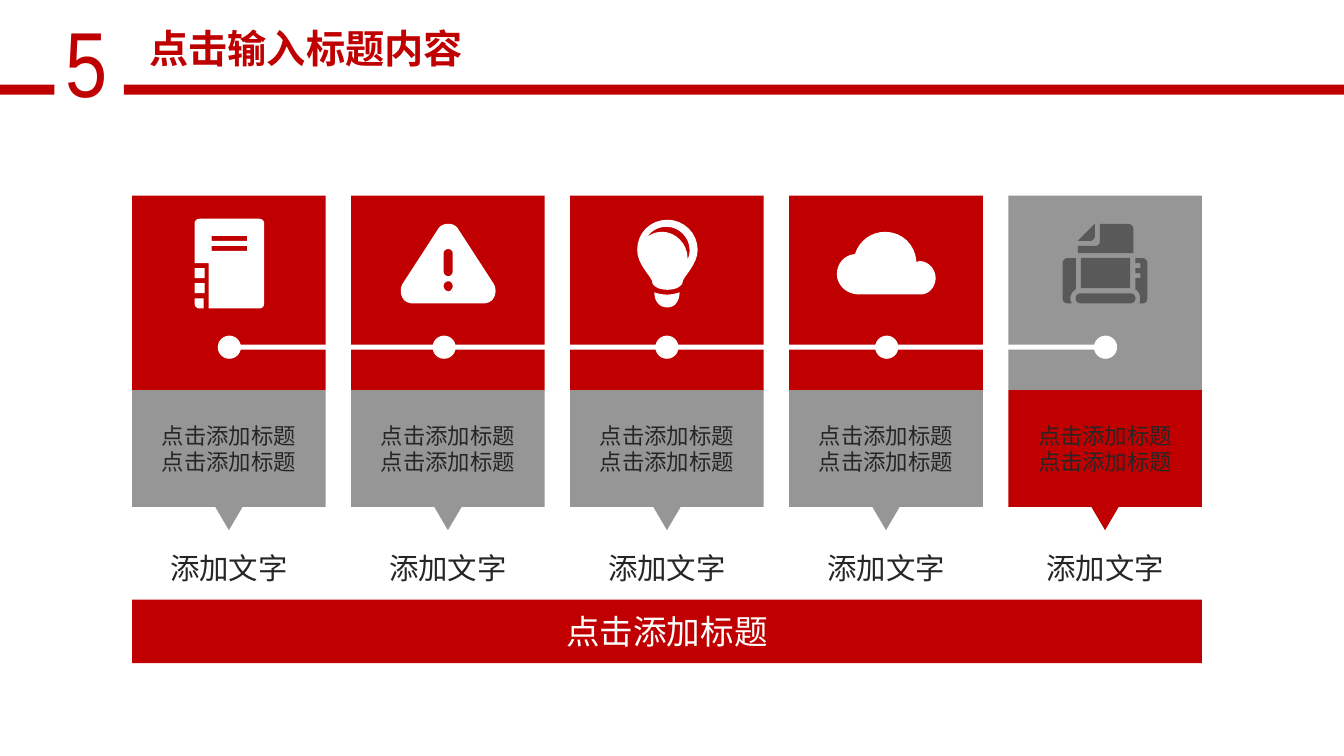
from pptx import Presentation
from pptx.dml.color import RGBColor
from pptx.enum.shapes import MSO_SHAPE
from pptx.enum.text import MSO_ANCHOR, PP_ALIGN
from pptx.util import Inches, Pt

RECTANGLE = MSO_SHAPE.RECTANGLE
OVAL = MSO_SHAPE.OVAL
TRIANGLE = MSO_SHAPE.ISOSCELES_TRIANGLE
CENTER = PP_ALIGN.CENTER
MIDDLE = MSO_ANCHOR.MIDDLE

CJK = "Noto Sans CJK SC"
THEME = {
    "red": RGBColor.from_string("C00000"),
    "gray": RGBColor.from_string("969696"),
    "dark": RGBColor.from_string("595959"),
    "white": RGBColor.from_string("FFFFFF"),
    "ink": RGBColor.from_string("262626"),
    "number": {"name": "Arial Narrow", "size": Pt(66), "bold": False},
    "title": {"name": CJK, "size": Pt(28), "bold": True},
    "bar": {"name": CJK, "size": Pt(24), "bold": False},
    "label": {"name": CJK, "size": Pt(21), "bold": False},
    "card": {"name": CJK, "size": Pt(16), "bold": False},
}

presentation = Presentation()
presentation.slide_width = Inches(13.33)
presentation.slide_height = Inches(7.5)
slide = presentation.slides.add_slide(presentation.slide_layouts[6])


def add_block(kind, box, fill=None, lines=(), style=None, color="ink"):
    place = [Inches(value) for value in box]
    if kind is None:
        shape = slide.shapes.add_textbox(*place)
    else:
        shape = slide.shapes.add_shape(kind, *place)
        shape.shadow.inherit = False
        shape.fill.solid()
        shape.fill.fore_color.rgb = THEME[fill]
        shape.line.fill.background()
    if lines:
        frame = shape.text_frame
        settings = {"word_wrap": True, "vertical_anchor": MIDDLE, "margin_left": 0,
                    "margin_right": 0, "margin_top": 0, "margin_bottom": 0}
        for name, value in settings.items():
            setattr(frame, name, value)
        frame.text = "\n".join(lines)
        for paragraph in frame.paragraphs:
            paragraph.alignment = CENTER
            paragraph.font.color.rgb = THEME[color]
            for name, value in THEME[style].items():
                setattr(paragraph.font, name, value)
    return shape


def add_outline(contours, fill):
    builder = None
    for start, *steps in contours:
        points, current = [], start
        for step in steps:
            if len(step) == 2:
                points.append(step)
            else:
                corners = [current, step[:2], step[2:4], step[4:]]
                for part in range(1, 9):
                    t = part / 8
                    weights = ((1 - t) ** 3, 3 * t * (1 - t) ** 2, 3 * t * t * (1 - t), t ** 3)
                    points.append([sum(w * corner[axis] for w, corner in zip(weights, corners))
                                   for axis in (0, 1)])
            current = step[-2:]
        origin = [Inches(value) for value in start]
        if builder is None:
            builder = slide.shapes.build_freeform(*origin)
        else:
            builder.move_to(*origin)
        builder.add_line_segments([(Inches(x), Inches(y)) for x, y in points], close=True)
    shape = builder.convert_to_shape()
    shape.shadow.inherit = False
    shape.fill.solid()
    shape.fill.fore_color.rgb = THEME[fill]
    shape.line.fill.background()


add_block(None, (0.57, 0, 0.58, 1.21), lines=["5"], style="number", color="red")
add_block(RECTANGLE, (1.23, 0.84, 12.1, 0.1), "red")
add_block(RECTANGLE, (0, 0.84, 0.54, 0.1), "red")
add_block(None, (1.24, 0.19, 3.59, 0.57), lines=["点击输入标题内容"], style="title", color="red")

COLUMNS = 5
LEFT, PITCH, CARD_WIDTH = 1.31, 2.1725, 1.92
for column in range(COLUMNS):
    left = LEFT + column * PITCH
    middle = left + CARD_WIDTH / 2
    top_fill, bottom_fill = ("gray", "red") if column == COLUMNS - 1 else ("red", "gray")
    add_block(RECTANGLE, (left, 1.94, CARD_WIDTH, 1.93), top_fill)
    add_block(RECTANGLE, (left, 3.87, CARD_WIDTH, 1.16), bottom_fill,
              ["点击添加标题"] * 2, "card")
    pointer = add_block(TRIANGLE, (middle - 0.135, 5.03, 0.27, 0.23), bottom_fill)
    pointer.rotation = 180
    add_block(None, (middle - 0.695, 5.4, 1.39, 0.46), lines=["添加文字"], style="label")

notebook = [
    [(1.98, 2.17), (2.57, 2.17), (2.6, 2.17, 2.62, 2.19, 2.62, 2.22), (2.62, 3.01),
     (2.62, 3.04, 2.6, 3.06, 2.57, 3.06), (2.07, 3.06), (2.07, 2.61), (1.93, 2.61),
     (1.93, 2.22), (1.93, 2.19, 1.95, 2.17, 1.98, 2.17)],
    [(2.1, 2.49), (2.45, 2.49), (2.45, 2.44), (2.1, 2.44)],
    [(2.1, 2.39), (2.45, 2.39), (2.45, 2.34), (2.1, 2.34)],
]
notebook_corner = [[(2.02, 3.06), (1.98, 3.06), (1.95, 3.06, 1.93, 3.04, 1.93, 3.01),
                    (1.93, 2.96), (2.02, 2.96)]]
warning = [
    [(4.34, 2.28), (4.36, 2.24, 4.4, 2.22, 4.45, 2.22), (4.49, 2.22, 4.53, 2.24, 4.55, 2.28),
     (4.9, 2.82), (4.92, 2.86, 4.92, 2.91, 4.9, 2.95), (4.88, 2.99, 4.84, 3.01, 4.79, 3.01),
     (4.1, 3.01), (4.05, 3.01, 4.01, 2.99, 3.99, 2.95), (3.97, 2.91, 3.97, 2.86, 3.99, 2.82)],
    [(4.45, 2.89), (4.47, 2.89, 4.49, 2.86, 4.49, 2.84), (4.49, 2.81, 4.47, 2.79, 4.45, 2.79),
     (4.42, 2.79, 4.4, 2.81, 4.4, 2.84), (4.4, 2.86, 4.42, 2.89, 4.45, 2.89)],
    [(4.4, 2.69), (4.4, 2.72, 4.42, 2.74, 4.45, 2.74), (4.47, 2.74, 4.49, 2.72, 4.49, 2.69),
     (4.49, 2.51), (4.49, 2.49, 4.47, 2.47, 4.45, 2.47), (4.42, 2.47, 4.4, 2.49, 4.4, 2.51)],
]
bulb_base = [[(6.49, 2.9), (6.57, 2.93, 6.66, 2.93, 6.74, 2.9),
              (6.74, 2.98, 6.7, 3.05, 6.62, 3.05), (6.53, 3.05, 6.49, 2.98, 6.49, 2.9)]]
bulb = [
    [(6.62, 2.18), (6.78, 2.18, 6.92, 2.31, 6.92, 2.48), (6.92, 2.63, 6.77, 2.75, 6.77, 2.8),
     (6.77, 2.82, 6.75, 2.84, 6.71, 2.86), (6.65, 2.88, 6.59, 2.88, 6.53, 2.86),
     (6.49, 2.84, 6.47, 2.82, 6.47, 2.8), (6.47, 2.75, 6.32, 2.63, 6.32, 2.48),
     (6.32, 2.31, 6.45, 2.18, 6.62, 2.18)],
    [(6.57, 2.3), (6.7, 2.3, 6.82, 2.42, 6.82, 2.56), (6.82, 2.58),
     (6.83, 2.55, 6.84, 2.52, 6.84, 2.48), (6.84, 2.36, 6.74, 2.25, 6.61, 2.25),
     (6.53, 2.25, 6.46, 2.29, 6.42, 2.35), (6.46, 2.32, 6.51, 2.3, 6.57, 2.3)],
]
cloud = [[(8.48, 2.52), (8.52, 2.39, 8.64, 2.3, 8.78, 2.3), (8.95, 2.3, 9.08, 2.43, 9.09, 2.6),
          (9.12, 2.59), (9.21, 2.59, 9.28, 2.67, 9.28, 2.76),
          (9.28, 2.83, 9.23, 2.91, 9.15, 2.92), (8.51, 2.92),
          (8.4, 2.92, 8.3, 2.83, 8.3, 2.72), (8.3, 2.62, 8.37, 2.53, 8.48, 2.52)]]
printer_left = [[(10.59, 2.56), (10.67, 2.56), (10.67, 2.87),
                 (10.62, 2.9, 10.6, 2.96, 10.63, 3.01), (10.59, 3.01),
                 (10.56, 3.01, 10.54, 2.99, 10.54, 2.96), (10.54, 2.61),
                 (10.54, 2.59, 10.56, 2.56, 10.59, 2.56)]]
printer_tray = [[(10.72, 2.91), (11.21, 2.91), (11.28, 2.91, 11.28, 3.01, 11.21, 3.01),
                 (10.72, 3.01), (10.65, 3.01, 10.65, 2.91, 10.72, 2.91)]]
printer_right = [[(11.26, 2.86), (11.26, 2.76), (11.31, 2.76), (11.31, 2.71), (11.26, 2.71),
                  (11.26, 2.66), (11.31, 2.66), (11.31, 2.61), (11.26, 2.61), (11.26, 2.56),
                  (11.33, 2.56), (11.36, 2.56, 11.38, 2.59, 11.38, 2.61), (11.38, 2.96),
                  (11.38, 2.99, 11.36, 3.01, 11.33, 3.01), (11.3, 3.01),
                  (11.32, 2.96, 11.31, 2.9, 11.26, 2.87)]]
paper_fold = [[(10.81, 2.39), (10.69, 2.39), (10.86, 2.22), (10.86, 2.34),
               (10.86, 2.37, 10.84, 2.39, 10.81, 2.39)]]
paper = [[(10.69, 2.44), (10.86, 2.44), (10.89, 2.44, 10.91, 2.42, 10.91, 2.39),
          (10.91, 2.22), (11.19, 2.22), (11.21, 2.22, 11.24, 2.24, 11.24, 2.27),
          (11.24, 2.51), (10.69, 2.51)]]

for icon in (notebook, notebook_corner, warning, bulb_base, bulb, cloud):
    add_outline(icon, "white")
for icon in (printer_left, printer_tray, printer_right, paper_fold, paper):
    add_outline(icon, "dark")
for ring_top in (2.66, 2.81):
    add_block(RECTANGLE, (1.93, ring_top, 0.1, 0.1), "white")
add_block(RECTANGLE, (10.72, 2.56, 0.49, 0.3), "dark")

for dot_left in (2.16, 4.29, 6.5, 8.68, 10.85):
    add_block(OVAL, (dot_left, 3.33, 0.23, 0.23), "white")
add_block(RECTANGLE, (2.2, 3.42, 8.69, 0.05), "white")

add_block(RECTANGLE, (LEFT, 5.95, 10.61, 0.63), "red", ["点击添加标题"], "bar", "white")

presentation.save("out.pptx")
